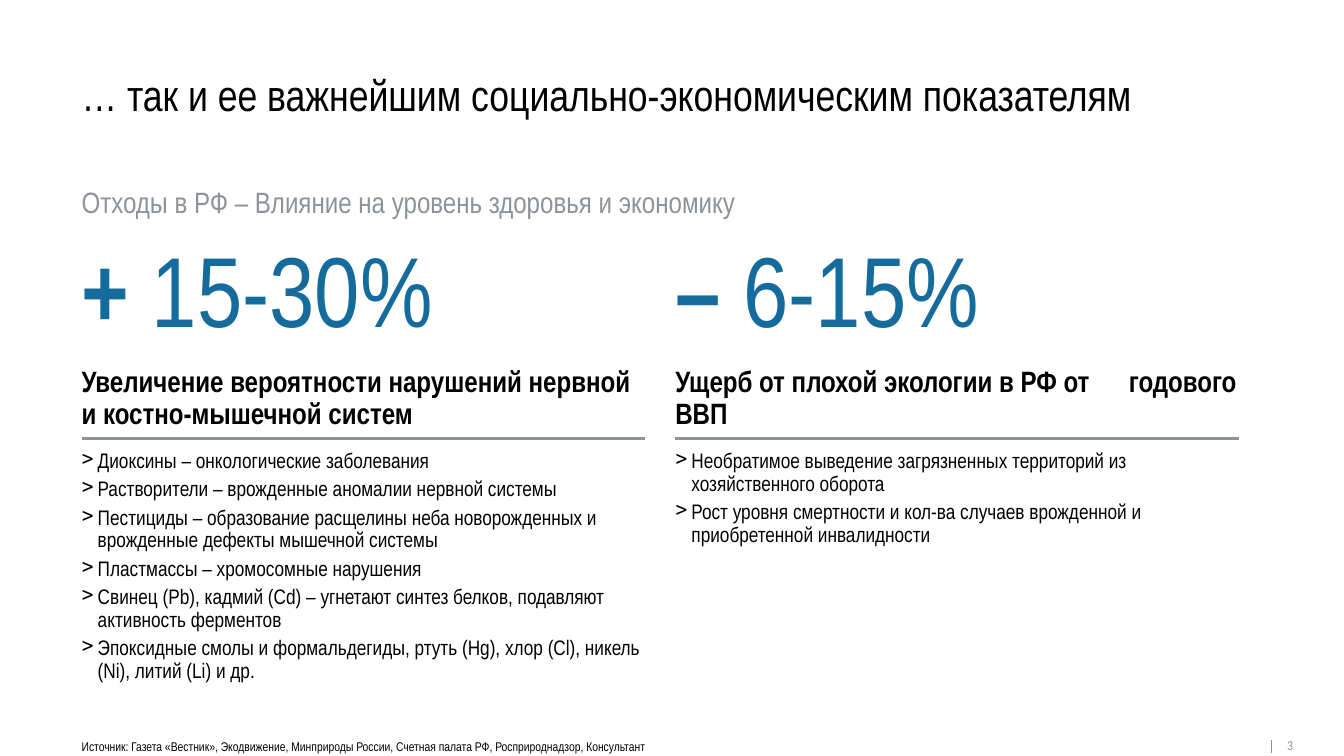
from pptx import Presentation
from pptx import util as u
from pptx.dml.color import RGBColor
from pptx.enum import shapes, text
from pptx.oxml.ns import qn
from lxml import etree

BLACK, GREY, BLUE = "000000", "8D9399", "156C9C"
LEFT, WIDE = 58.3, 849.6
COLUMN_WIDTH, COLUMN_STEP = 402.5, 424.1
RULE_TOP = 313.2

COLUMNS = [
    {
        "figure": [("+", True), (" 15-30%", False)],
        "heading": "Увеличение вероятности нарушений нервной и костно-мышечной систем",
        "points": [
            "Диоксины – онкологические заболевания",
            "Растворители – врожденные аномалии нервной системы",
            "Пестициды – образование расщелины неба новорожденных и врожденные дефекты мышечной системы",
            "Пластмассы – хромосомные нарушения",
            "Свинец (Pb), кадмий (Cd) – угнетают синтез белков, подавляют активность ферментов",
            "Эпоксидные смолы и формальдегиды, ртуть (Hg), хлор (Cl), никель (Ni), литий (Li) и др.",
        ],
    },
    {
        "figure": [("– ", True), ("6-15%", False)],
        "heading": "Ущерб от плохой экологии в РФ от\tгодового ВВП",
        "points": [
            "Необратимое выведение загрязненных территорий из хозяйственного оборота",
            "Рост уровня смертности и кол-ва случаев врожденной и приобретенной инвалидности",
        ],
    },
]


def color(value):
    return RGBColor.from_string(value)


def write(paragraph, content, size=15, fill=BLACK, bold=False, before=0, bullet=None, tab=None):
    """Fill a paragraph with a string or with (string, bold) pairs."""
    properties = paragraph._p.get_or_add_pPr()
    if bullet:
        properties.set("marL", str(u.Pt(11.5)))
        properties.set("indent", str(-u.Pt(11.5)))
        etree.SubElement(properties, qn("a:buChar")).set("char", bullet)
    if tab:
        stops = etree.SubElement(properties, qn("a:tabLst"))
        etree.SubElement(stops, qn("a:tab"), pos=str(u.Pt(tab)), algn="l")
    paragraph.line_spacing = 0.9
    paragraph.space_before = u.Pt(before)
    pairs = [(content, bold)] if isinstance(content, str) else content
    for words, heavy in pairs:
        run = paragraph.add_run()
        run.text = words
        run.font.name = "Arial Narrow"
        run.font.size = u.Pt(size)
        run.font.bold = heavy
        run.font.color.rgb = color(fill)


class SlideBuilder:
    def __init__(self, presentation):
        self.slide = presentation.slides.add_slide(presentation.slide_layouts[6])

    def text(self, box, paragraphs, anchor=text.MSO_ANCHOR.TOP, top=0, bottom=0, gap=0, **style):
        shape = self.slide.shapes.add_textbox(*map(u.Pt, box))
        frame = shape.text_frame
        frame.word_wrap = True
        frame.vertical_anchor = anchor
        frame.margin_left = frame.margin_right = 0
        frame.margin_top, frame.margin_bottom = u.Pt(top), u.Pt(bottom)
        for index, content in enumerate(paragraphs):
            paragraph = frame.add_paragraph() if index else frame.paragraphs[0]
            write(paragraph, content, before=gap if index else 0, **style)

    def line(self, start, end, width):
        connector = self.slide.shapes.add_connector(
            shapes.MSO_CONNECTOR.STRAIGHT, *map(u.Pt, start + end))
        connector.line.color.rgb = color(GREY)
        connector.line.width = u.Pt(width)
        etree.SubElement(connector._element.spPr, qn("a:effectLst"))

    def column(self, left, figure, heading, points):
        self.line((left, RULE_TOP), (left + COLUMN_WIDTH, RULE_TOP), 1.75)
        self.text((left, 262, COLUMN_WIDTH, 51.5), [heading], text.MSO_ANCHOR.BOTTOM,
                  bottom=5.8, size=21, bold=True, tab=324 if "\t" in heading else None)
        self.text((left, RULE_TOP, COLUMN_WIDTH, 28 * len(points) + 10), points,
                  top=8.6, gap=4, bullet=">")
        self.text((left, 172.8, COLUMN_WIDTH, 77.8), [figure], size=71, fill=BLUE)


def main():
    presentation = Presentation()
    presentation.slide_width, presentation.slide_height = u.Pt(960), u.Pt(540)
    builder = SlideBuilder(presentation)

    # Title and subtitle
    builder.text((LEFT, 52.6, WIDE, 67.7),
                 ["… так и ее важнейшим социально-экономическим показателям"], size=31)
    builder.text((LEFT, 134.6, WIDE, 23.8),
                 ["Отходы в РФ – Влияние на уровень здоровья и экономику"], size=21, fill=GREY)

    # Two columns: key figure, heading, rule and points
    for index, column in enumerate(COLUMNS):
        builder.column(LEFT + index * COLUMN_STEP, **column)

    # Source and page number
    builder.text((LEFT, 528.5, 425, 10),
                 ["Источник: Газета «Вестник», Экодвижение, Минприроды России, Счетная палата РФ, "
                  "Росприроднадзор, Консультант"], text.MSO_ANCHOR.BOTTOM, size=9)
    builder.line((908, 528.5), (908, 538), 0.75)
    builder.text((919.5, 528.5, 10, 10), ["3"], size=9, fill=GREY)

    presentation.save("out.pptx")


if __name__ == "__main__":
    main()
